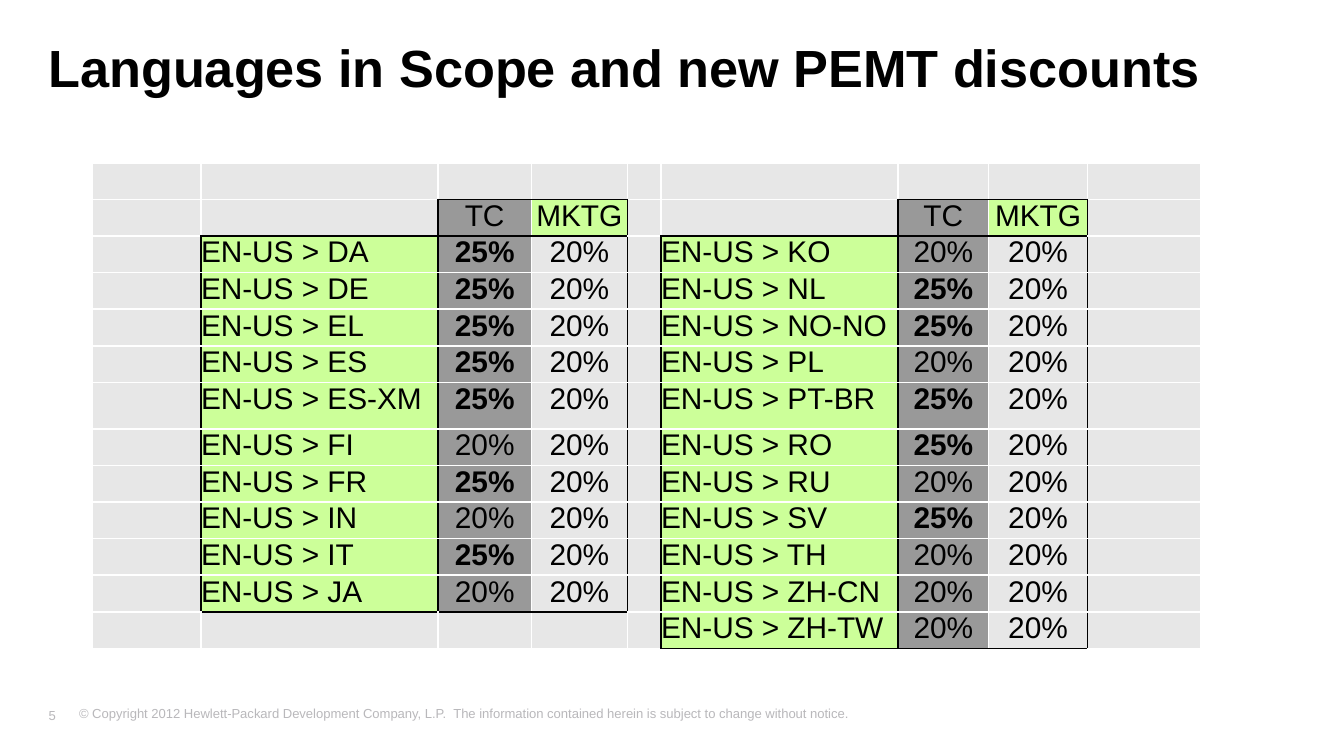
"""Build the slide listing languages in scope and their new PEMT discounts."""
from lxml import etree
from pptx import Presentation
from pptx import util as u
from pptx.dml.color import RGBColor
from pptx.enum import text
from pptx.oxml import ns

BLACK, WHITE, GREY = "000000", "FFFFFF", "B9B8BB"
PALE, DARK, GREEN = "E7E7E7", "999999", "CCFF99"


def add_run(paragraph, words, size, color, bold=False):
    run = paragraph.add_run()
    run.text = words
    run.font.name = "Arial"
    run.font.size = u.Pt(size)
    run.font.bold = bold
    run.font.color.rgb = RGBColor.from_string(color)


def add_border(cell, side, color):
    properties = cell._tc.get_or_add_tcPr()
    line = etree.SubElement(properties, ns.qn(f"a:ln{side}"), w=str(u.Pt(1)))
    fill = etree.SubElement(line, ns.qn("a:solidFill"))
    etree.SubElement(fill, ns.qn("a:srgbClr"), val=color)


presentation = Presentation()
presentation.slide_width, presentation.slide_height = u.Pt(720), u.Pt(405)
slide = presentation.slides.add_slide(presentation.slide_layouts[6])

copyright_line = (
    "© Copyright 2012 Hewlett-Packard Development Company, L.P.  "
    "The information contained herein is subject to change without notice."
)
top, middle = text.MSO_ANCHOR.TOP, text.MSO_ANCHOR.MIDDLE
text_boxes = [
    ("Languages in Scope and new PEMT discounts", (26, 18.7, 639.4, 34), (0, 0, 0, 0), top, 28, BLACK, True),
    (copyright_line, (35.3, 374.4, 630.7, 18), (7.2, 3.6, 7.2, 3.6), top, 7, GREY, False),
    ("5", (26, 377.3, 25.2, 11.5), (0, 3.6, 7.2, 3.6), middle, 7, GREY, False),
]
for words, place, insets, anchor, size, color, bold in text_boxes:
    shape = slide.shapes.add_textbox(*map(u.Pt, place))
    frame = shape.text_frame
    frame.word_wrap = True
    frame.vertical_anchor = anchor
    frame.margin_left, frame.margin_top, frame.margin_right, frame.margin_bottom = map(u.Pt, insets)
    add_run(frame.paragraphs[0], words, size, color, bold)

blocks = {
    1: [("DA", 25), ("DE", 25), ("EL", 25), ("ES", 25), ("ES-XM", 25),
        ("FI", 20), ("FR", 25), ("IN", 20), ("IT", 25), ("JA", 20)],
    5: [("KO", 20), ("NL", 25), ("NO-NO", 25), ("PL", 20), ("PT-BR", 25), ("RO", 25),
        ("RU", 20), ("SV", 25), ("TH", 20), ("ZH-CN", 20), ("ZH-TW", 20)],
}
entries, regions, fills = {}, {}, {}
for first, languages in blocks.items():
    for offset, (heading, fill) in enumerate([("TC", DARK), ("MKTG", GREEN)], 1):
        position = (1, first + offset)
        entries[position], regions[position], fills[position] = heading, "header", fill
    for row, (language, discount) in enumerate(languages, 2):
        line = [
            (f"EN-US > {language}", "language", GREEN),
            (f"{discount}%", "discount", DARK),
            ("20%", "discount", PALE),
        ]
        for column, (words, region, fill) in enumerate(line, first):
            position = (row, column)
            entries[position], regions[position], fills[position] = words, region, fill

widths = [58.5, 127, 50, 51.5, 18, 127, 48.5, 53, 61]
heights = [19.6] * 13
heights[6] = 25
graphic = slide.shapes.add_table(
    len(heights), len(widths), u.Pt(49.2), u.Pt(87.3), u.Pt(sum(widths)), u.Pt(sum(heights))
)
table = graphic.table
table.first_row = table.horz_banding = False
for column, width in zip(table.columns, widths):
    column.width = u.Pt(width)
for row, height in zip(table.rows, heights):
    row.height = u.Pt(height)

neighbours = {"L": (0, -1), "R": (0, 1), "T": (-1, 0), "B": (1, 0)}
for row in range(len(heights)):
    for column in range(len(widths)):
        position = (row, column)
        cell = table.cell(row, column)
        cell.margin_left = cell.margin_top = cell.margin_right = cell.margin_bottom = 0
        for side, (down, across) in neighbours.items():
            same = regions.get(position) == regions.get((row + down, column + across))
            add_border(cell, side, WHITE if same else BLACK)
        cell.fill.solid()
        cell.fill.fore_color.rgb = RGBColor.from_string(fills.get(position, PALE))
        paragraph = cell.text_frame.paragraphs[0]
        if position in entries:
            words = entries[position]
            add_run(paragraph, words, 16, BLACK, words == "25%")
            if regions[position] != "language":
                paragraph.alignment = text.PP_ALIGN.CENTER
        else:
            etree.SubElement(paragraph._p, ns.qn("a:endParaRPr"), sz="1200")

presentation.save("out.pptx")
